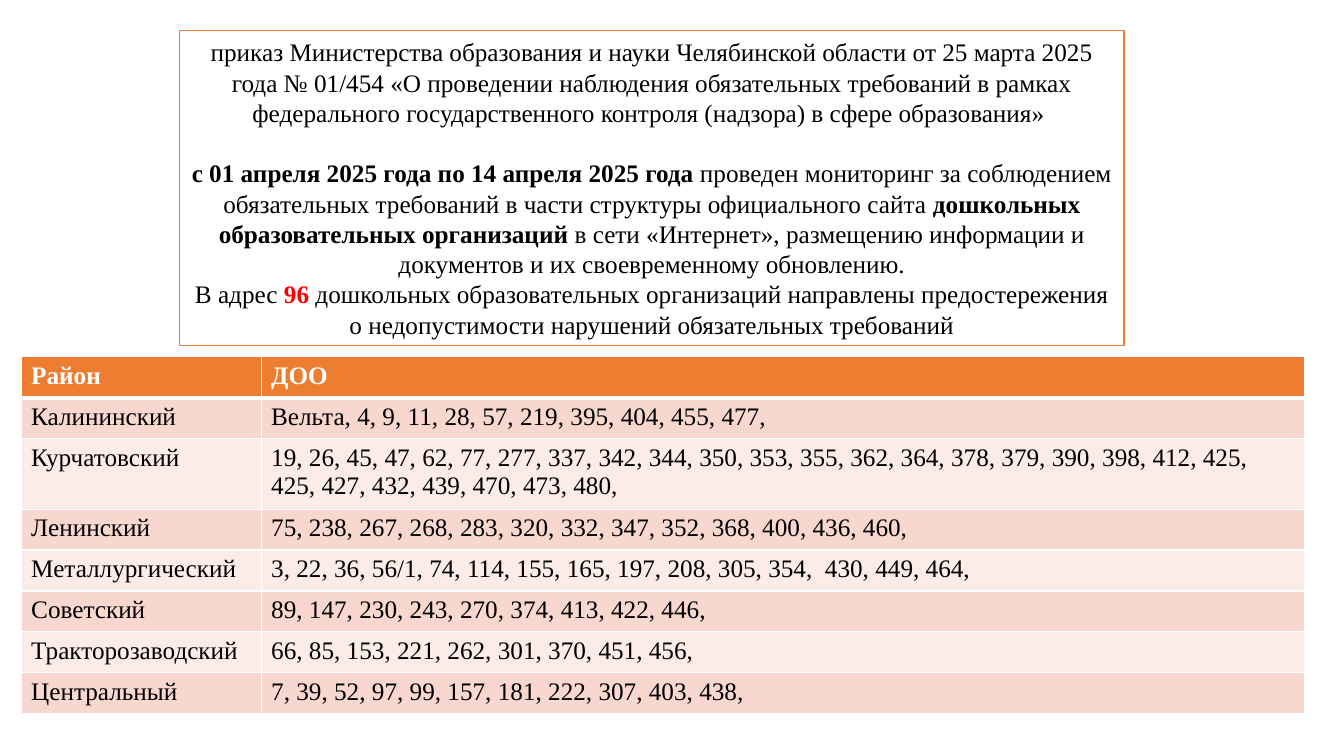
from lxml import etree
from pptx import Presentation
from pptx.dml.color import RGBColor
from pptx.enum.shapes import MSO_SHAPE
from pptx.enum.text import MSO_ANCHOR, PP_ALIGN
from pptx.oxml.ns import qn
from pptx.util import Inches, Pt

RECT = MSO_SHAPE.RECTANGLE
CENTER = PP_ALIGN.CENTER
MIDDLE = MSO_ANCHOR.MIDDLE
FONT = "Times New Roman"
HEX = {"white": "FFFFFF", "black": "000000", "red": "FF0000",
       "orange": "ED7D31", "dark": "F8D7CE", "light": "FCECE8"}

ORDER = [
    [("приказ Министерства образования и науки Челябинской области от 25 марта 2025 "
      "года № 01/454 «О проведении наблюдения обязательных требований в рамках "
      "федерального государственного контроля (надзора) в сфере образования» ", "black", False)],
    [("с 01 апреля 2025 года по 14 апреля 2025 года ", "black", True),
     ("проведен мониторинг за соблюдением обязательных требований в части структуры "
      "официального сайта ", "black", False),
     ("дошкольных образовательных организаций ", "black", True),
     ("в сети «Интернет», размещению информации и документов и их своевременному "
      "обновлению.", "black", False)],
    [("В адрес ", "black", False),
     ("96 ", "red", True),
     ("дошкольных образовательных организаций направлены предостережения "
      "о недопустимости нарушений обязательных требований", "black", False)],
]

ROWS = [
    ("Район", "ДОО"),
    ("Калининский", "Вельта, 4, 9, 11, 28, 57, 219, 395, 404, 455, 477,"),
    ("Курчатовский", "19, 26, 45, 47, 62, 77, 277, 337, 342, 344, 350, 353, 355, 362, 364, "
     "378, 379, 390, 398, 412, 425, 425, 427, 432, 439, 470, 473, 480,"),
    ("Ленинский", "75, 238, 267, 268, 283, 320, 332, 347, 352, 368, 400, 436, 460,"),
    ("Металлургический", "3, 22, 36, 56/1, 74, 114, 155, 165, 197, 208, 305, 354,  430, 449, 464,"),
    ("Советский", "89, 147, 230, 243, 270, 374, 413, 422, 446,"),
    ("Тракторозаводский", "66, 85, 153, 221, 262, 301, 370, 451, 456,"),
    ("Центральный", "7, 39, 52, 97, 99, 157, 181, 222, 307, 403, 438,"),
]
COLS = (2.38, 10.35)
HIGH = 3.54
TALL = 0.7
LONG = 2


def color(name):
    """Return the named colour."""
    return RGBColor.from_string(HEX[name])


def add_run(para, text, tint, bold):
    """Append one formatted run to a paragraph."""
    run = para.add_run()
    run.text = text
    run.font.name = FONT
    run.font.size = Pt(18)
    run.font.bold = bold
    run.font.color.rgb = color(tint)


def add_edge(cell, side, width):
    """Draw a white border on one side of a cell."""
    props = cell._tc.get_or_add_tcPr()
    edge = etree.SubElement(props, qn(f"a:ln{side}"), w=str(Pt(width)))
    fill = etree.SubElement(edge, qn("a:solidFill"))
    etree.SubElement(fill, qn("a:srgbClr"), val=HEX["white"])


def add_order(slide):
    """Add the framed text about the order."""
    box = slide.shapes.add_shape(RECT, Inches(1.78), Inches(0.3), Inches(9.37), Inches(3.13))
    box.shadow.inherit = False
    box.fill.solid()
    box.fill.fore_color.rgb = color("white")
    box.line.color.rgb = color("orange")
    box.line.width = Pt(1)
    frame = box.text_frame
    frame.word_wrap = True
    frame.vertical_anchor = MIDDLE
    for i, runs in enumerate(ORDER):
        para = frame.paragraphs[0] if i == 0 else frame.add_paragraph()
        para.alignment = CENTER
        para.space_before = Pt(21.6 if i == 1 else 0)
        for text, tint, bold in runs:
            add_run(para, text, tint, bold)


def add_list(slide):
    """Add the table of districts and their kindergartens."""
    table = slide.shapes.add_table(len(ROWS), len(COLS), Inches(0.21), Inches(3.54),
                                   Inches(sum(COLS)), Inches(HIGH)).table
    for col, width in zip(table.columns, COLS):
        col.width = Inches(width)
    step = (HIGH - TALL) / (len(ROWS) - 1)
    for r, texts in enumerate(ROWS):
        head = r == 0
        fill = "orange" if head else "dark" if r % 2 else "light"
        table.rows[r].height = Inches(TALL if r == LONG else step)
        for c, text in enumerate(texts):
            cell = table.cell(r, c)
            for side in "LRTB":
                thick = (head and side == "B") or (r == 1 and side == "T")
                add_edge(cell, side, 3 if thick else 1)
            cell.fill.solid()
            cell.fill.fore_color.rgb = color(fill)
            add_run(cell.text_frame.paragraphs[0], text, "white" if head else "black", head)


def main():
    """Build and save the slide."""
    deck = Presentation()
    deck.slide_width = Inches(13.33)
    deck.slide_height = Inches(7.5)
    slide = deck.slides.add_slide(deck.slide_layouts[6])
    add_order(slide)
    add_list(slide)
    deck.save("out.pptx")


if __name__ == "__main__":
    main()
